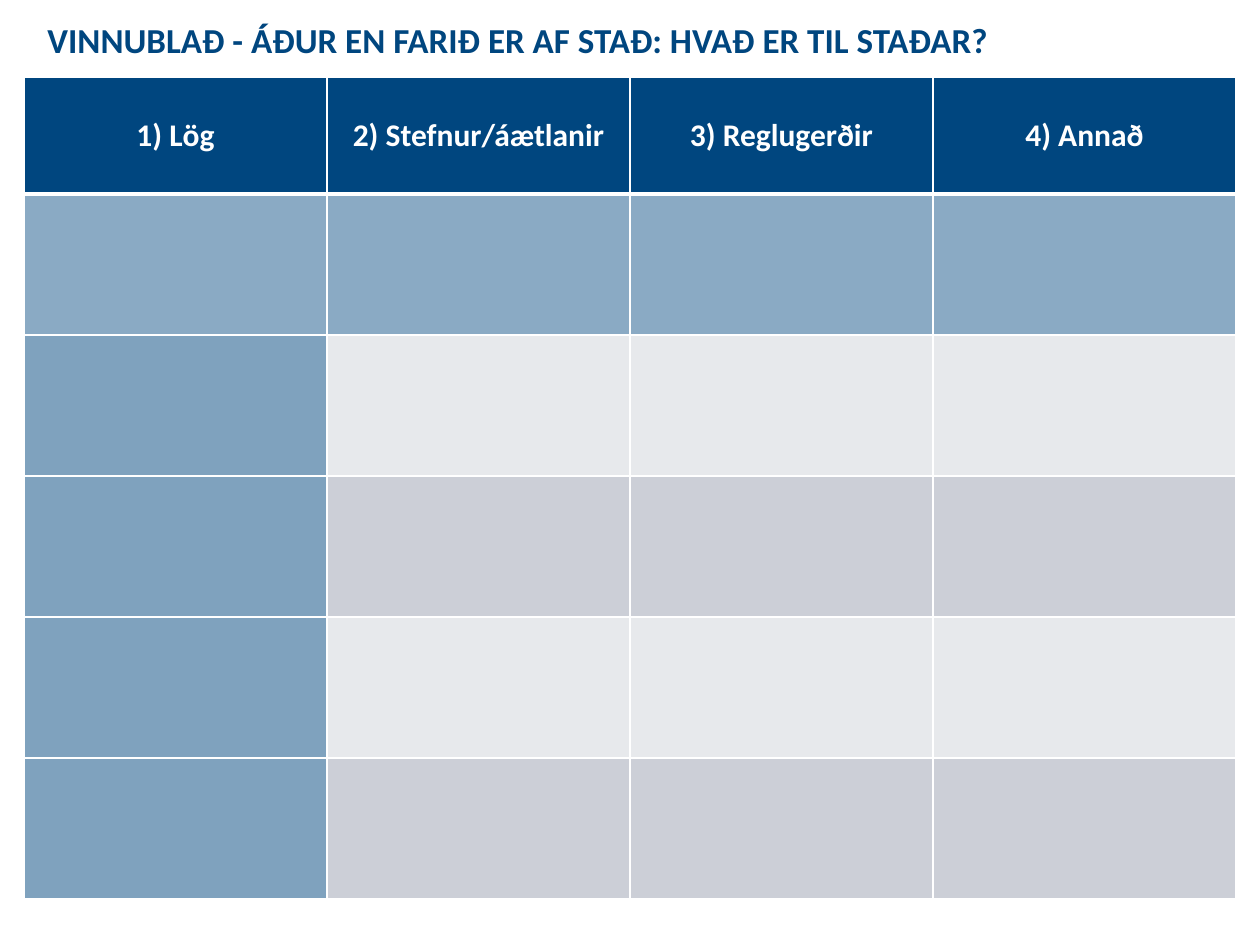
from dataclasses import dataclass
from typing import Optional

from lxml.etree import SubElement
from pptx import Presentation
from pptx.dml.color import RGBColor
from pptx.enum.text import MSO_ANCHOR, PP_ALIGN
from pptx.oxml.ns import qn
from pptx.util import Pt

SCALE = 914400 / 126
NAVY = RGBColor(0x00, 0x46, 0x7F)
WHITE = RGBColor(0xFF, 0xFF, 0xFF)
LIGHT = RGBColor(0xE7, 0xE9, 0xEC)
GREY = RGBColor(0xCC, 0xCF, 0xD7)

TITLE = "VINNUBLAÐ - ÁÐUR EN FARIÐ ER AF STAÐ: HVAÐ ER TIL STAÐAR?"
HEADS = ["1) Lög", "2) Stefnur/áætlanir", "3) Reglugerðir", "4) Annað"]
ROWS = 6
WIDTH, HEAD, BODY = 303, 117, 141


@dataclass(frozen=True)
class Paint:
    color: RGBColor
    alpha: Optional[int] = None


def px(n: int) -> int:
    return round(n * SCALE)


def write(frame, text: str, size: int, color: RGBColor, align) -> None:
    para = frame.paragraphs[0]
    para.alignment = align
    run = para.add_run()
    run.text = text
    run.font.color.rgb = color
    style = {"name": "Calibri", "size": Pt(size), "bold": True}
    for key, value in style.items():
        setattr(run.font, key, value)


def edge(cell, sides: dict[str, int]) -> None:
    props = cell._tc.get_or_add_tcPr()
    for side, width in sides.items():
        line = SubElement(props, qn(f"a:ln{side}"), w=str(Pt(width)))
        fill = SubElement(line, qn("a:solidFill"))
        SubElement(fill, qn("a:srgbClr"), val=str(WHITE))


def tint(cell, paint: Paint) -> None:
    cell.fill.solid()
    cell.fill.fore_color.rgb = paint.color
    if paint.alpha is not None:
        color = cell._tc.tcPr.find(qn("a:solidFill")).find(qn("a:srgbClr"))
        SubElement(color, qn("a:alpha"), val=str(paint.alpha * 1000))


def pick(row: int, col: int) -> Paint:
    if row == 0:
        return Paint(NAVY)
    if row == 1:
        return Paint(NAVY, 46)
    if col == 0:
        return Paint(NAVY, 50)
    return Paint(GREY if row % 2 else LIGHT)


def draw_grid(slide) -> None:
    cols = len(HEADS)
    high = HEAD + BODY * (ROWS - 1)
    grid = slide.shapes.add_table(
        ROWS, cols, px(24), px(77), px(WIDTH * cols), px(high)
    ).table
    grid.first_row = grid.horz_banding = False
    for col in grid.columns:
        col.width = px(WIDTH)
    for i, row in enumerate(grid.rows):
        row.height = px(BODY if i else HEAD)
        sides = {"L": 1, "R": 1, "T": 3 if i == 1 else 1, "B": 1 if i else 3}
        for j, cell in enumerate(row.cells):
            edge(cell, sides)
            tint(cell, pick(i, j))
    for j, text in enumerate(HEADS):
        cell = grid.cell(0, j)
        style = {
            "vertical_anchor": MSO_ANCHOR.MIDDLE,
            "margin_left": px(9),
            "margin_right": px(9),
            "margin_top": px(5),
            "margin_bottom": px(5),
        }
        for key, value in style.items():
            setattr(cell, key, value)
        write(cell.text_frame, text, 18, WHITE, PP_ALIGN.CENTER)


def draw_title(slide) -> None:
    frame = slide.shapes.add_textbox(px(35), px(10), px(1191), px(59)).text_frame
    frame.word_wrap = True
    frame.vertical_anchor = MSO_ANCHOR.MIDDLE
    write(frame, TITLE, 20, NAVY, PP_ALIGN.LEFT)


def main() -> None:
    deck = Presentation()
    deck.slide_width, deck.slide_height = px(1260), px(945)
    slide = deck.slides.add_slide(deck.slide_layouts[6])
    draw_grid(slide)
    draw_title(slide)
    deck.save("out.pptx")


if __name__ == "__main__":
    main()
